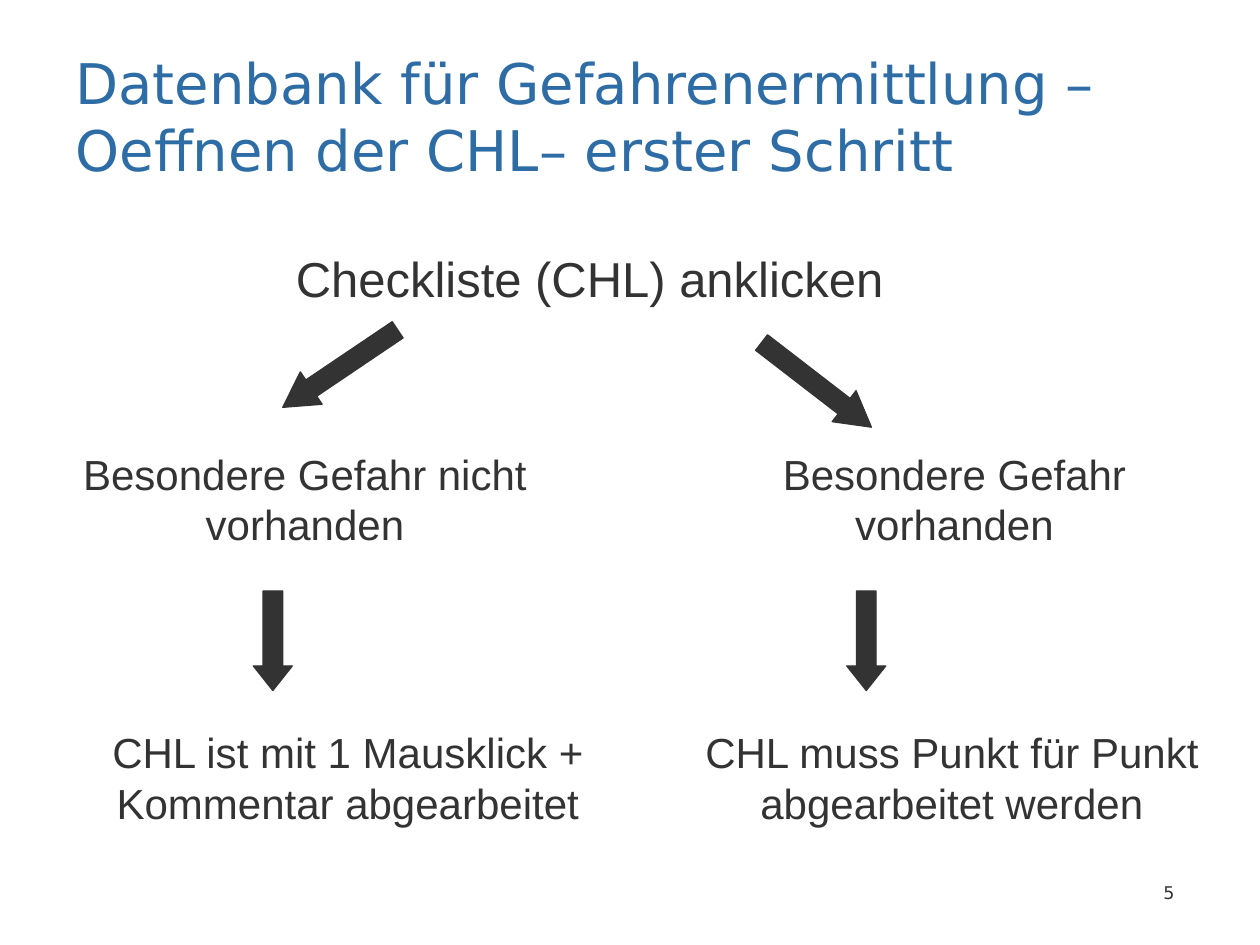
"""Build the slide on the first step after opening a checklist (CHL)."""
from dataclasses import dataclass

from pptx import Presentation
from pptx.dml.color import RGBColor
from pptx.enum import shapes, text
from pptx.util import Inches, Pt


@dataclass(frozen=True)
class Theme:
    """Colours, fonts and type sizes of the slide."""
    blue: RGBColor = RGBColor(0x2E, 0x6C, 0xA5)
    dark: RGBColor = RGBColor(0x33, 0x33, 0x33)
    head_font: str = "DejaVu Sans"
    body_font: str = "Arial"
    title: int = 32
    lead: int = 28
    body: int = 24
    number: int = 10


THEME = Theme()
LEFT, CENTER, RIGHT = text.PP_ALIGN.LEFT, text.PP_ALIGN.CENTER, text.PP_ALIGN.RIGHT
TOP, MIDDLE = text.MSO_ANCHOR.TOP, text.MSO_ANCHOR.MIDDLE


def write(sp, words, size, font=THEME.body_font, color=THEME.dark, align=CENTER, anchor=TOP):
    """Fill a shape with one styled paragraph."""
    tf = sp.text_frame
    tf.word_wrap = True
    tf.auto_size = text.MSO_AUTO_SIZE.NONE
    tf.vertical_anchor = anchor
    p = tf.paragraphs[0]
    p.text = words
    p.alignment = align
    p.font.size = Pt(size)
    p.font.name = font
    p.font.color.rgb = color


def add_title(s, words, x, y, w, h):
    """Place and format the title placeholder."""
    sp = s.shapes.title
    sp.left, sp.top, sp.width, sp.height = map(Inches, (x, y, w, h))
    write(sp, words, THEME.title, THEME.head_font, THEME.blue, LEFT, MIDDLE)


def add_label(s, words, x, y, w, h, size=THEME.body, **style):
    """Add a text box."""
    write(s.shapes.add_textbox(*map(Inches, (x, y, w, h))), words, size, **style)


def add_arrow(s, x, y, length, angle, head):
    """Add a block arrow turned clockwise by an angle."""
    sp = s.shapes.add_shape(shapes.MSO_SHAPE.RIGHT_ARROW,
                            *map(Inches, (x, y, length, 0.31)))
    sp.adjustments[0], sp.adjustments[1] = 0.5, head
    sp.rotation = angle
    sp.shadow.inherit = False
    sp.fill.solid()
    sp.fill.fore_color.rgb = THEME.dark
    sp.line.color.rgb = THEME.dark
    sp.line.width = Pt(0.75)


def main():
    """Assemble and save the slide."""
    prs = Presentation()
    prs.slide_width, prs.slide_height = Inches(10), Inches(7.5)
    s = prs.slides.add_slide(prs.slide_layouts[5])

    add_title(s, "Datenbank für Gefahrenermittlung –\vOeffnen der CHL– erster Schritt",
              0.5, 0.3, 8.53, 1.24)
    add_label(s, "Checkliste (CHL) anklicken", 2.25, 1.92, 5.04, 0.57,
              THEME.lead, align=LEFT)

    case_y, result_y, label_h = 3.51, 5.72, 0.91
    add_label(s, "Besondere Gefahr nicht vorhanden", 0.41, case_y, 4.02, label_h)
    add_label(s, "Besondere Gefahr vorhanden", 5.53, case_y, 4.09, label_h)
    add_label(s, "CHL ist mit 1 Mausklick + Kommentar abgearbeitet",
              0.2, result_y, 5.12, label_h)
    add_label(s, "CHL muss Punkt für Punkt abgearbeitet werden",
              5.47, result_y, 4.17, label_h)

    for x, y, angle in ((2.15, 2.77, 146), (5.93, 2.9, 37.6)):
        add_arrow(s, x, y, 1.1, angle, 0.88)
    for x in (1.77, 6.48):
        add_arrow(s, x, 4.93, 0.79, 90, 0.63)

    add_label(s, "5", 7.24, 6.92, 2.18, 0.33, THEME.number,
              font=THEME.head_font, align=RIGHT, anchor=MIDDLE)
    prs.save("out.pptx")


if __name__ == "__main__":
    main()
